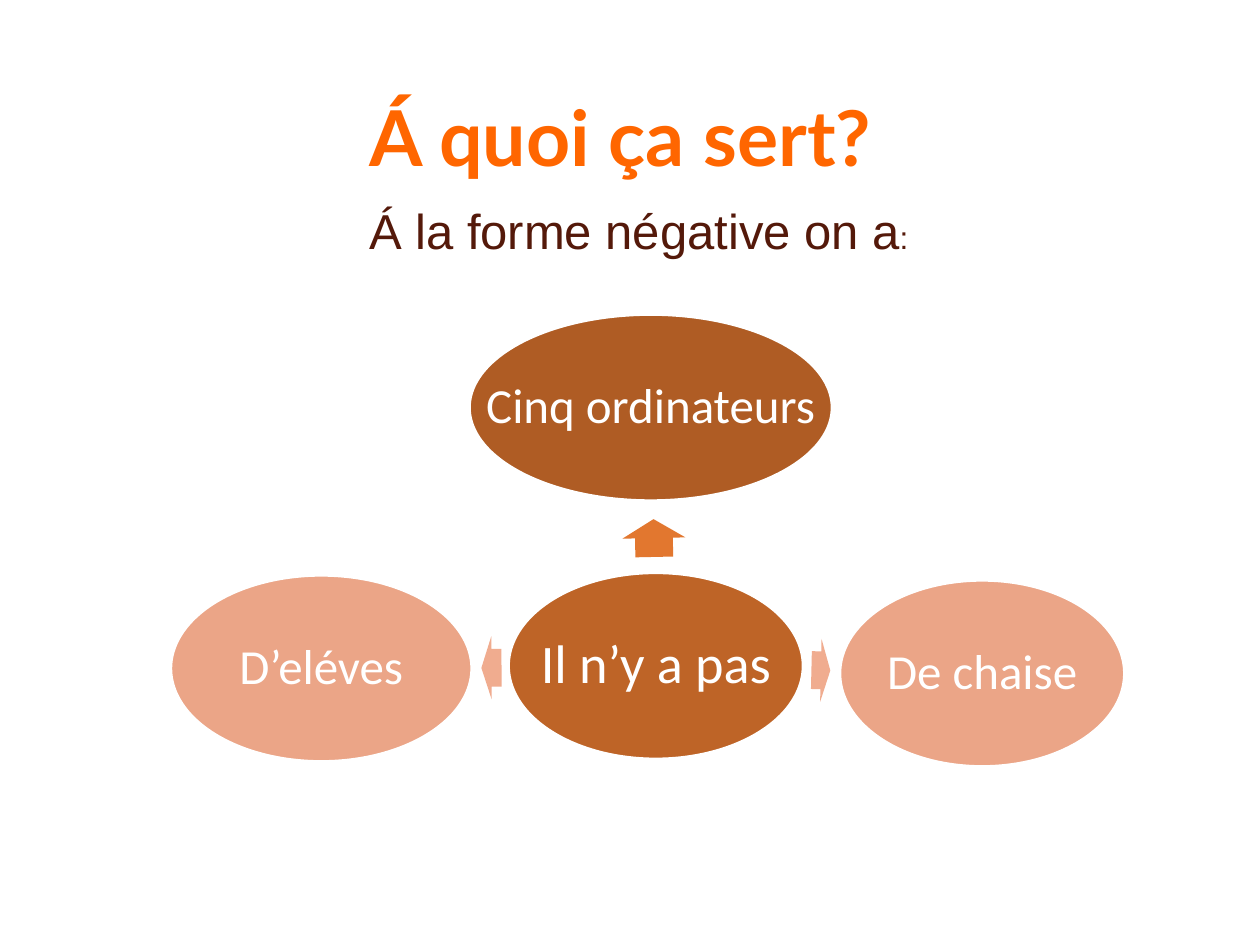
from dataclasses import dataclass

from pptx import Presentation
from pptx.dml.color import RGBColor
from pptx.enum.shapes import MSO_SHAPE
from pptx.enum.text import MSO_ANCHOR, PP_ALIGN
from pptx.util import Inches, Pt

WHITE = RGBColor(0xFF, 0xFF, 0xFF)
ORANGE = RGBColor(0xFF, 0x66, 0x00)
MAROON = RGBColor(0x54, 0x19, 0x0A)
RUST = RGBColor(0xBE, 0x64, 0x27)
BROWN = RGBColor(0xAF, 0x5C, 0x24)
TANGERINE = RGBColor(0xE2, 0x77, 0x2F)
SALMON = RGBColor(0xEB, 0xA5, 0x87)
PEACH = RGBColor(0xF0, 0xAC, 0x8F)

COLUMNS, ROWS = 100, 75
OVAL_ROWS = 14.7
ARROW_ROWS = 5


@dataclass(frozen=True)
class Oval:
    words: str
    column: float
    row: float
    columns: float
    size: int
    fill: RGBColor


@dataclass(frozen=True)
class Arrow:
    column: float
    row: float
    columns: float
    rotation: float
    fill: RGBColor


OVALS = [
    Oval("Il n’y a pas", 40.4, 45.5, 23.3, 31, RUST),
    Oval("Cinq ordinateurs", 37.3, 25, 28.7, 28, BROWN),
    Oval("De chaise", 66.7, 46.1, 22.5, 28, SALMON),
    Oval("D’eléves", 13.6, 45.7, 23.8, 28, SALMON),
]
ARROWS = [
    Arrow(50.4, 40.2, 3, 268.8, TANGERINE),
    Arrow(64.4, 50.7, 1.5, 1.3, PEACH),
    Arrow(38.2, 50.5, 1.6, 179.6, PEACH),
]

deck = Presentation()
deck.slide_width, deck.slide_height = Inches(10), Inches(7.5)
slide = deck.slides.add_slide(deck.slide_layouts[5])


def cells(column: float, row: float, columns: float, rows: float) -> tuple[int, ...]:
    across = deck.slide_width / COLUMNS
    down = deck.slide_height / ROWS
    return tuple(round(n) for n in (column * across, row * down, columns * across, rows * down))


def style(run, typeface: str, size: int, color: RGBColor, bold: bool = False) -> None:
    run.font.name = typeface
    run.font.size = Pt(size)
    run.font.color.rgb = color
    run.font.bold = bold


def draw_oval(oval: Oval) -> None:
    ellipse = slide.shapes.add_shape(
        MSO_SHAPE.OVAL, *cells(oval.column, oval.row, oval.columns, OVAL_ROWS))
    ellipse.shadow.inherit = False
    ellipse.fill.solid()
    ellipse.fill.fore_color.rgb = oval.fill
    ellipse.line.color.rgb = WHITE
    ellipse.line.width = Pt(1)
    frame = ellipse.text_frame
    frame.margin_left = frame.margin_right = Inches(0.04)
    frame.margin_top = frame.margin_bottom = Inches(0.04)
    frame.vertical_anchor = MSO_ANCHOR.MIDDLE
    frame.word_wrap = False
    frame.text = oval.words
    label = frame.paragraphs[0]
    label.alignment = PP_ALIGN.CENTER
    label.line_spacing = 0.9
    style(label.runs[0], "Calibri", oval.size, WHITE)


def draw_arrow(arrow: Arrow) -> None:
    pointer = slide.shapes.add_shape(
        MSO_SHAPE.RIGHT_ARROW, *cells(arrow.column, arrow.row, arrow.columns, ARROW_ROWS))
    pointer.shadow.inherit = False
    pointer.adjustments[0] = 0.6
    pointer.adjustments[1] = 0.5
    pointer.rotation = arrow.rotation
    pointer.fill.solid()
    pointer.fill.fore_color.rgb = arrow.fill
    pointer.line.fill.background()


title = slide.shapes.title
title.left, title.top, title.width, title.height = cells(6.9, 4, 86.2, 14.5)
title.text_frame.text = "Á quoi ça sert? "
title.text_frame.vertical_anchor = MSO_ANCHOR.MIDDLE
question = title.text_frame.paragraphs[0]
question.alignment = PP_ALIGN.CENTER
question.line_spacing = 0.9
style(question.runs[0], "Lato", 44, ORANGE, bold=True)

for oval in OVALS:
    draw_oval(oval)
for arrow in ARROWS:
    draw_arrow(arrow)

subtitle = slide.shapes.add_textbox(*cells(19.6, 15.4, 62.9, 5.7))
subtitle.text_frame.word_wrap = True
negation = subtitle.text_frame.paragraphs[0]
negation.alignment = PP_ALIGN.CENTER
for words, size in (("Á la forme négative on a", 28), (": ", 18)):
    run = negation.add_run()
    run.text = words
    style(run, "Arial", size, MAROON)

deck.save("out.pptx")
